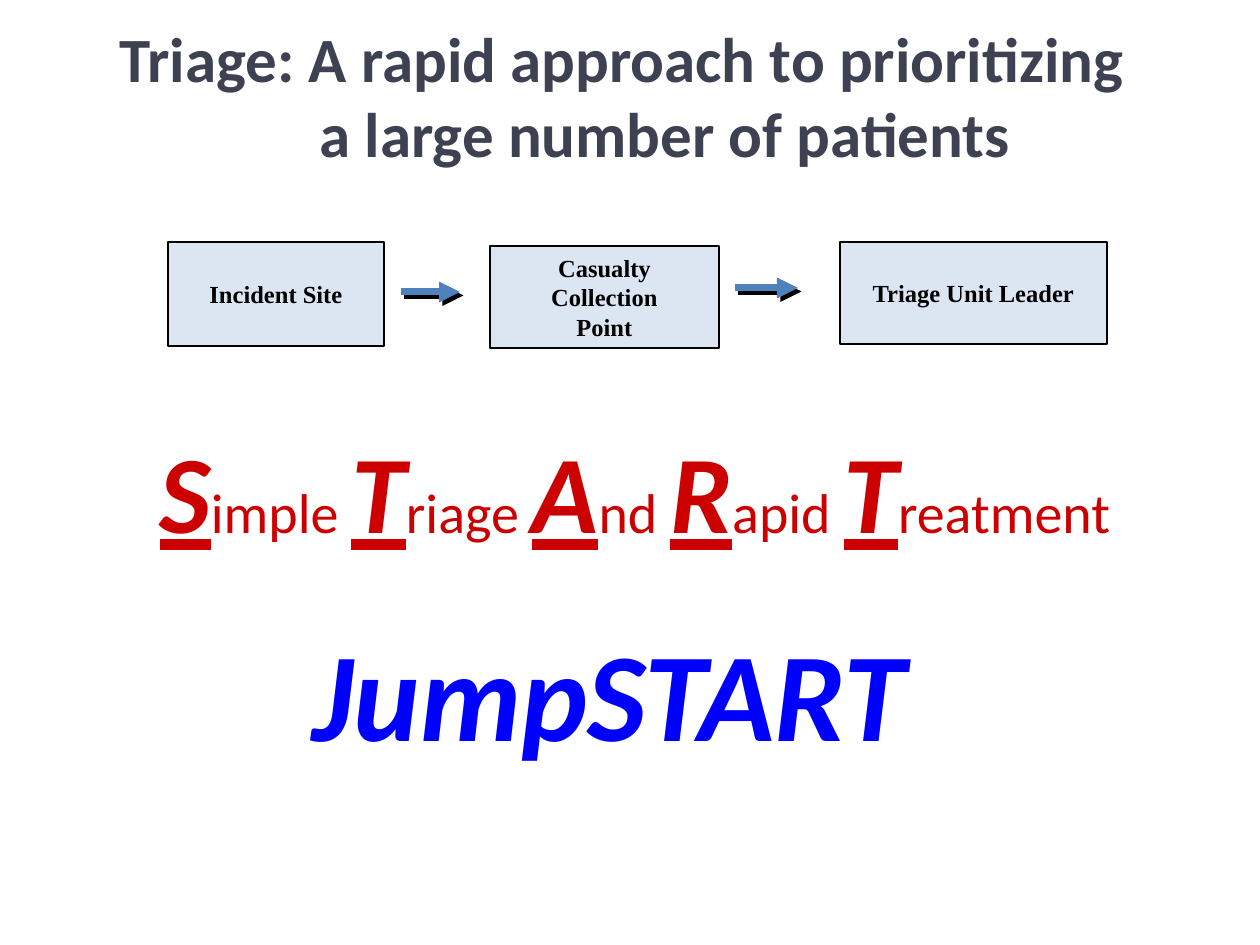
import dataclasses

import pptx
import pptx.dml.color
import pptx.enum.shapes
import pptx.enum.text
import pptx.oxml
import pptx.oxml.ns
import pptx.util

EMU_PER_PX = 914400 / 126
CENTER = pptx.enum.text.PP_ALIGN.CENTER
TOP = pptx.enum.text.MSO_ANCHOR.TOP
MIDDLE = pptx.enum.text.MSO_ANCHOR.MIDDLE


@dataclasses.dataclass(frozen=True)
class Theme:
    heading_font: str = "Calibri"
    box_font: str = "Times New Roman"
    title_color: str = "3D4151"
    start_color: str = "CC0000"
    jump_color: str = "0000FF"
    box_fill: str = "DCE6F2"
    box_line: str = "000000"
    arrow_color: str = "4F81BD"
    title_size: int = 36
    initial_size: int = 63
    rest_size: int = 32
    jump_size: int = 72
    box_size: int = 14


THEME = Theme()


def px(length):
    return pptx.util.Emu(round(length * EMU_PER_PX))


def rgb(color):
    return pptx.dml.color.RGBColor.from_string(color)


def set_values(target, values):
    for name, value in values.items():
        setattr(target, name, value)


def place(shape, box):
    set_values(shape, dict(zip(("left", "top", "width", "height"), map(px, box))))


def set_frame(frame, anchor):
    set_values(frame, {
        "word_wrap": True,
        "auto_size": pptx.enum.text.MSO_AUTO_SIZE.NONE,
        "vertical_anchor": anchor,
    })


def add_run(paragraph, text, name, size, color, **flags):
    run = paragraph.add_run()
    run.text = text
    set_values(run.font, {"name": name, "size": pptx.util.Pt(size), **flags})
    run.font.color.rgb = rgb(color)


def add_lines(frame, lines, name, size, color, **flags):
    for index, line in enumerate(lines):
        paragraph = frame.add_paragraph() if index else frame.paragraphs[0]
        paragraph.alignment = CENTER
        add_run(paragraph, line, name, size, color, bold=True, **flags)


def fill_title(shape, box):
    place(shape, box)
    set_frame(shape.text_frame, TOP)
    lines = ("Triage: A rapid approach to prioritizing", "a large number of patients")
    add_lines(shape.text_frame, lines, THEME.heading_font, THEME.title_size, THEME.title_color)
    properties = shape.text_frame.paragraphs[1]._p.get_or_add_pPr()
    properties.set("marL", str(px(86)))


def add_step(slide, box, lines):
    shape = slide.shapes.add_shape(pptx.enum.shapes.MSO_SHAPE.RECTANGLE, *map(px, box))
    shape.shadow.inherit = False
    shape.fill.solid()
    shape.fill.fore_color.rgb = rgb(THEME.box_fill)
    shape.line.color.rgb = rgb(THEME.box_line)
    shape.line.width = pptx.util.Pt(1)
    set_frame(shape.text_frame, MIDDLE)
    add_lines(shape.text_frame, lines, THEME.box_font, THEME.box_size, THEME.box_line)


def add_arrow(slide, left, right, middle):
    connector = slide.shapes.add_connector(
        pptx.enum.shapes.MSO_CONNECTOR.STRAIGHT, px(left), px(middle), px(right), px(middle))
    connector.line.color.rgb = rgb(THEME.arrow_color)
    connector.line.width = pptx.util.Pt(4)
    namespace = pptx.oxml.ns.nsdecls("a")
    connector.line._get_or_add_ln().append(
        pptx.oxml.parse_xml(f'<a:tailEnd {namespace} type="triangle"/>'))
    connector._element.spPr.append(pptx.oxml.parse_xml(
        f'<a:effectLst {namespace}><a:outerShdw dist="{pptx.util.Pt(2.8)}" dir="2700000" '
        f'algn="ctr" rotWithShape="0"><a:srgbClr val="{THEME.box_line}"/>'
        '</a:outerShdw></a:effectLst>'))


def add_flow(slide, box):
    left, top, width, height = box
    steps = (
        (0, 0, 216, 104, ("Incident Site",)),
        (322, 4, 229, 102, ("Casualty", "Collection", "Point")),
        (width - 267, 0, 267, 102, ("Triage Unit Leader",)),
    )
    for x, y, step_width, step_height, lines in steps:
        add_step(slide, (left + x, top + y, step_width, step_height), lines)
    for start, end, middle in ((233, 292, 50), (567, 630, 46)):
        add_arrow(slide, left + start, left + end, top + middle)


def fill_start(shape, box):
    place(shape, box)
    set_frame(shape.text_frame, TOP)
    paragraph = shape.text_frame.paragraphs[0]
    properties = paragraph._p.get_or_add_pPr()
    set_values(paragraph, {"line_spacing": 0.9, "space_before": pptx.util.Pt(0)})
    properties.set("marL", "0")
    properties.set("indent", "0")
    properties.append(pptx.oxml.parse_xml(f'<a:buNone {pptx.oxml.ns.nsdecls("a")}/>'))
    words = "Simple Triage And Rapid Treatment".split()
    for index, word in enumerate(words):
        gap = " " if index < len(words) - 1 else ""
        for text, size, strong in (
            (word[0], THEME.initial_size, True),
            (word[1:] + gap, THEME.rest_size, False),
        ):
            add_run(paragraph, text, THEME.heading_font, size, THEME.start_color,
                    bold=strong, italic=strong, underline=strong)


def add_jump_start(slide, box):
    shape = slide.shapes.add_textbox(*map(px, box))
    set_frame(shape.text_frame, TOP)
    add_lines(shape.text_frame, ("JumpSTART",), THEME.heading_font, THEME.jump_size,
              THEME.jump_color, italic=True)


def main():
    presentation = pptx.Presentation()
    set_values(presentation, {"slide_width": px(1260), "slide_height": px(945)})
    slide = presentation.slides.add_slide(presentation.slide_layouts[1])
    fill_start(slide.placeholders[1], (147, 432, 984, 214))
    fill_title(slide.shapes.title, (0, 13, 1244, 165))
    add_jump_start(slide, (222, 609, 774, 165))
    add_flow(slide, (168, 242, 939, 106))
    presentation.save("out.pptx")


if __name__ == "__main__":
    main()
